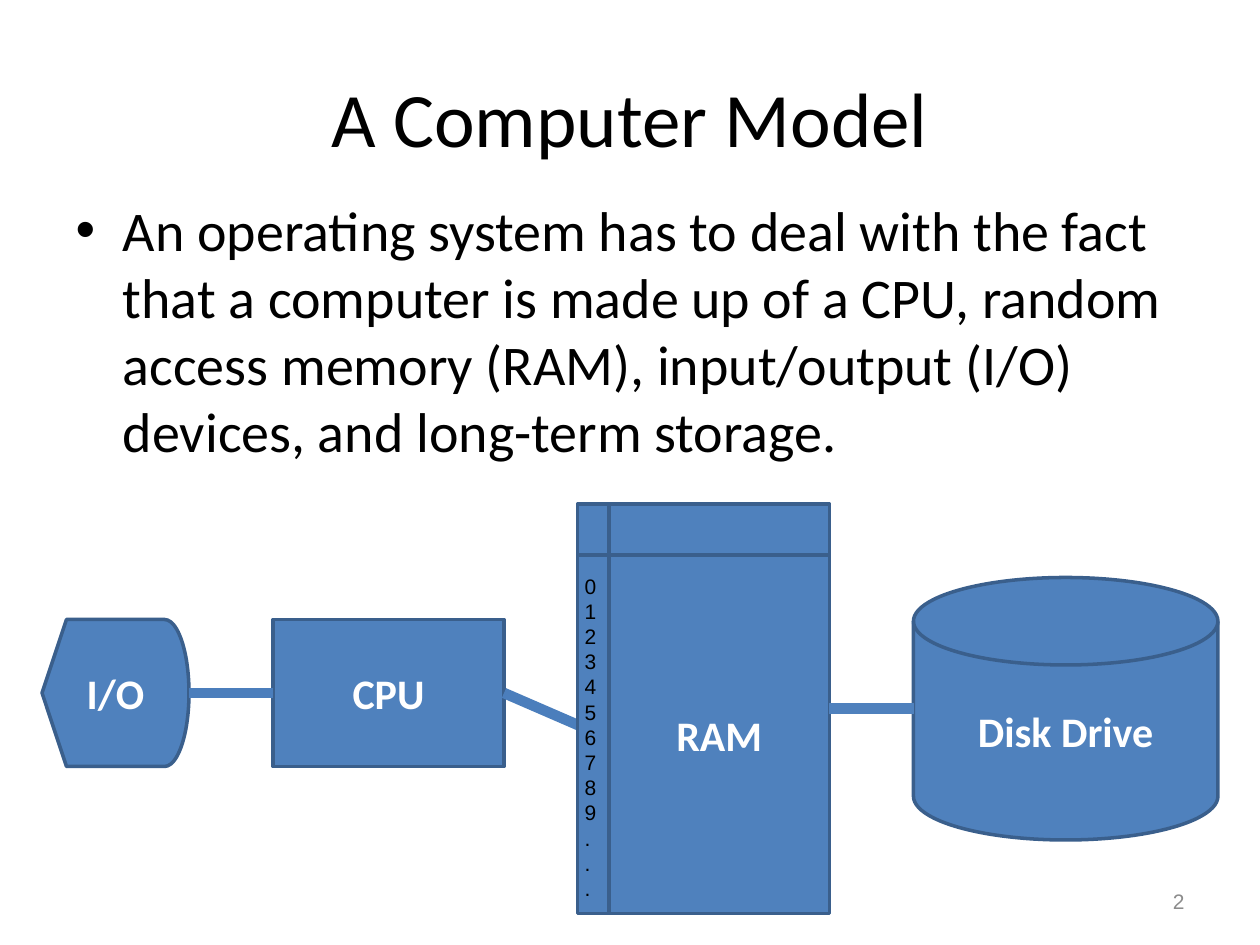
from lxml import etree
from pptx import Presentation
from pptx.dml.color import RGBColor
from pptx.enum.shapes import MSO_CONNECTOR, MSO_SHAPE
from pptx.enum.text import MSO_ANCHOR, MSO_AUTO_SIZE, PP_ALIGN
from pptx.oxml.ns import qn
from pptx.util import Pt

STRAIGHT = MSO_CONNECTOR.STRAIGHT
DISK = MSO_SHAPE.FLOWCHART_MAGNETIC_DISK
STORAGE = MSO_SHAPE.FLOWCHART_INTERNAL_STORAGE
PROCESS = MSO_SHAPE.FLOWCHART_PROCESS
DISPLAY = MSO_SHAPE.FLOWCHART_DISPLAY
TOP, MIDDLE = MSO_ANCHOR.TOP, MSO_ANCHOR.MIDDLE
LEFT, CENTER, RIGHT = PP_ALIGN.LEFT, PP_ALIGN.CENTER, PP_ALIGN.RIGHT
FIT_SHAPE = MSO_AUTO_SIZE.SHAPE_TO_FIT_TEXT
LEFT_SIDE, RIGHT_SIDE = 1, 3
FILL, OUTLINE, LINK = "4F81BD", "3A5F8C", "4B7EBC"


def color(hex_string):
    """Return the colour for a hex string."""
    return RGBColor.from_string(hex_string)


def write_text(shape, text, size, font="Calibri", fill="000000", bold=False,
               align=LEFT, anchor=TOP, wrap=True):
    """Write one paragraph per line of text and format it."""
    frame = shape.text_frame
    frame.text = text
    frame.word_wrap = wrap
    frame.vertical_anchor = anchor
    for paragraph in frame.paragraphs:
        paragraph.alignment = align
        for run in paragraph.runs:
            run.font.size = Pt(size)
            run.font.name = font
            run.font.bold = bold
            run.font.color.rgb = color(fill)


def fill_placeholder(shape, text, left, top, width, height, **text_format):
    """Move a placeholder and write its text."""
    shape.left, shape.top = Pt(left), Pt(top)
    shape.width, shape.height = Pt(width), Pt(height)
    write_text(shape, text, **text_format)


def add_label(slide, text, left, top, width, height, **text_format):
    """Add a text box in 12 point Arial."""
    label = slide.shapes.add_textbox(Pt(left), Pt(top), Pt(width), Pt(height))
    write_text(label, text, size=12, font="Arial", **text_format)
    return label


def add_component(slide, kind, text, left, top, width, height):
    """Add a computer part with its name centred in it."""
    shape = slide.shapes.add_shape(kind, Pt(left), Pt(top), Pt(width), Pt(height))
    shape.shadow.inherit = False
    shape.fill.solid()
    shape.fill.fore_color.rgb = color(FILL)
    shape.line.color.rgb = color(OUTLINE)
    shape.line.width = Pt(2)
    write_text(shape, text, size=24, fill="FFFFFF", bold=True,
               align=CENTER, anchor=MIDDLE)
    return shape


def add_link(slide, begin_shape, end_x, end_y, end_shape=None, line_color=LINK):
    """Link the right side of a part to a point or to the left side of a part."""
    link = slide.shapes.add_connector(STRAIGHT, 0, 0, Pt(end_x), Pt(end_y))
    link.begin_connect(begin_shape, RIGHT_SIDE)
    if end_shape is not None:
        link.end_connect(end_shape, LEFT_SIDE)
    link.line.color.rgb = color(line_color)
    link.line.width = Pt(6)
    etree.SubElement(link._element.spPr, qn("a:effectLst"))


def main():
    """Build the slide and save it."""
    presentation = Presentation()
    presentation.slide_width, presentation.slide_height = Pt(720), Pt(540)
    slide = presentation.slides.add_slide(presentation.slide_layouts[1])

    fill_placeholder(slide.shapes.title, "A Computer Model", 36, 21.6, 648, 90,
                     size=44, align=CENTER, anchor=MIDDLE)
    fill_placeholder(
        slide.placeholders[1],
        "An operating system has to deal with the fact that a computer is made up "
        "of a CPU, random access memory (RAM), input/output (I/O) devices, and "
        "long-term storage.", 36, 108, 648, 374.4, size=32)
    add_label(slide, "2", 516, 500.4, 168, 28.8, fill="8C8C8C",
              align=RIGHT, anchor=MIDDLE)

    cpu = add_component(slide, PROCESS, "CPU", 156, 354, 132, 84)
    add_link(slide, cpu, 348, 422)
    add_component(slide, DISK, "Disk Drive", 522, 330, 174, 150)
    ram = add_component(slide, STORAGE, "RAM", 330, 288, 144, 234)
    addresses = add_label(slide, "\n".join("0123456789..."), 327, 324, 21, 196.6,
                          wrap=False)
    addresses.text_frame.auto_size = FIT_SHAPE
    add_link(slide, ram, 522, 405, line_color=FILL)
    display = add_component(slide, DISPLAY, "I/O", 24, 354, 84, 84)
    add_link(slide, display, 156, 396, end_shape=cpu)

    presentation.save("out.pptx")


if __name__ == "__main__":
    main()
